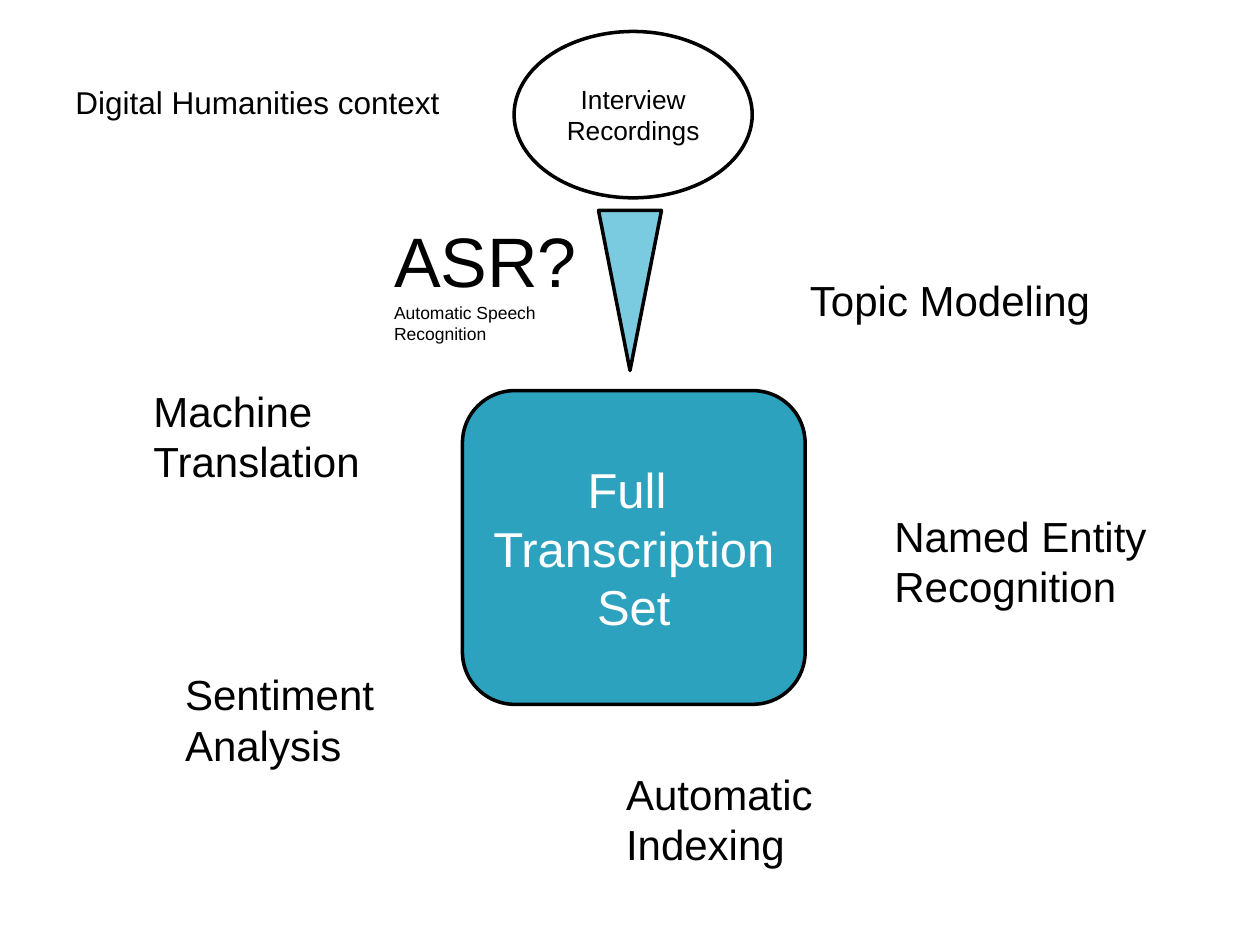
from pptx import Presentation
from pptx.dml.color import RGBColor
from pptx.enum import shapes, text
from pptx.util import Inches, Pt

FONT = "Arial"
BLACK, WHITE, TEAL, SKY = "000000", "FFFFFF", "2DA2BF", "7ACBE0"
KIND = shapes.MSO_SHAPE


def paint(target, color):
    """Set a colour format from a hex string."""
    target.rgb = RGBColor.from_string(color)


def write(frame, lines, color=BLACK, align=text.PP_ALIGN.LEFT):
    """Fill a frame with one paragraph for each (words, size) pair."""
    frame.word_wrap = True
    for i, (words, size) in enumerate(lines):
        para = frame.paragraphs[0] if i == 0 else frame.add_paragraph()
        para.text = words
        para.alignment = align
        para.font.name = FONT
        para.font.size = Pt(size)
        paint(para.font.color, color)


def node(slide, kind, box, fill, lines=(), color=BLACK):
    """Draw an outlined shape with centred text."""
    shape = slide.shapes.add_shape(kind, *map(Inches, box))
    shape.shadow.inherit = False
    shape.fill.solid()
    paint(shape.fill.fore_color, fill)
    paint(shape.line.color, BLACK)
    shape.line.width = Pt(2)
    shape.text_frame.vertical_anchor = text.MSO_ANCHOR.MIDDLE
    write(shape.text_frame, lines, color, text.PP_ALIGN.CENTER)
    return shape


def label(slide, box, lines):
    """Place a left-aligned text box that grows with its text."""
    frame = slide.shapes.add_textbox(*map(Inches, box)).text_frame
    write(frame, lines)
    frame.auto_size = text.MSO_AUTO_SIZE.SHAPE_TO_FIT_TEXT


def flow(slide, left, top):
    """Draw the path from recordings down to the transcription set."""
    words = ("Full ", "Transcription ", "Set")
    node(slide, KIND.ROUNDED_RECTANGLE, (left, top + 2.85, 2.72, 2.49),
         TEAL, [(word, 28) for word in words], WHITE)
    node(slide, KIND.OVAL, (left + 0.41, top, 1.89, 1.32), WHITE,
         [("Interview Recordings", 15)])
    wedge = node(slide, KIND.ISOSCELES_TRIANGLE,
                 (left + 1.08, top + 1.42, 0.5, 1.27), SKY)
    wedge.rotation = 180
    label(slide, (left - 0.64, top + 1.43, 2.76, 1.11),
          [("ASR?", 40), ("Automatic Speech", 10), ("Recognition", 10)])


def tasks(slide):
    """Place the language tasks around the transcription set."""
    for words, left, top, width, height in (
        ("Topic Modeling", 6.33, 2.13, 2.72, 0.5),
        ("Sentiment Analysis", 1.37, 5.26, 2.72, 0.91),
        ("Named Entity Recognition", 7, 4, 2.72, 0.91),
        ("Machine Translation", 1.12, 3.01, 1.97, 0.91),
        ("Automatic Indexing", 4.87, 6.05, 2.72, 0.91),
    ):
        label(slide, (left, top, width, height), [(words, 24)])


def main():
    """Build and save the slide."""
    deck = Presentation()
    deck.slide_width, deck.slide_height = Inches(10), Inches(7.5)
    slide = deck.slides.add_slide(deck.slide_layouts[6])
    flow(slide, 3.67, 0.25)
    tasks(slide)
    label(slide, (0.5, 0.61, 3.32, 0.4), [("Digital Humanities context", 18)])
    deck.save("out.pptx")


if __name__ == "__main__":
    main()
